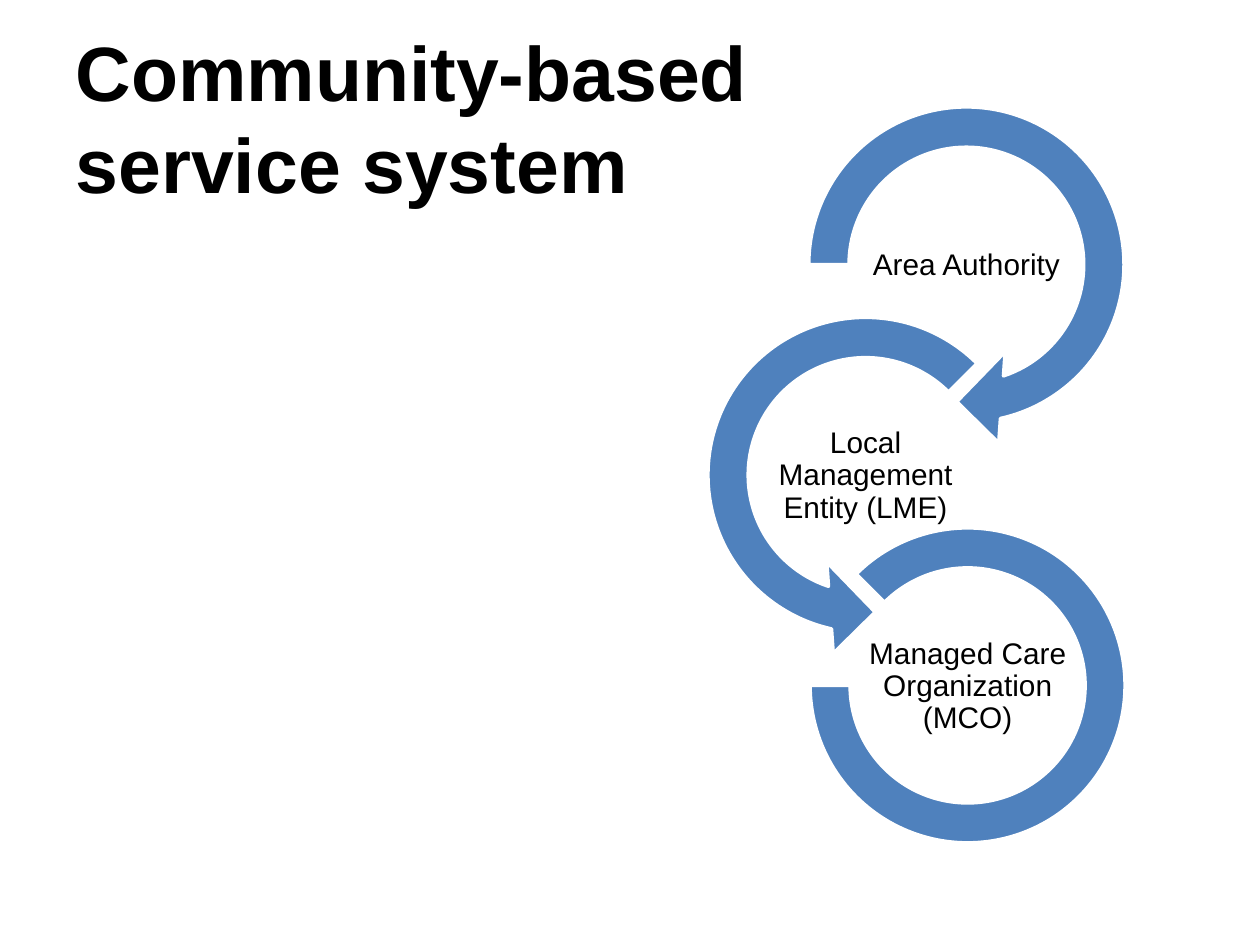
from pptx import Presentation
from pptx.dml.color import RGBColor
from pptx.enum.shapes import MSO_SHAPE as Shape
from pptx.enum.text import MSO_ANCHOR as Anchor, PP_ALIGN as Align
from pptx.util import Inches, Pt

BLACK = RGBColor(0x00, 0x00, 0x00)
WHITE = RGBColor(0xFF, 0xFF, 0xFF)
BLUE = RGBColor(0x4F, 0x81, 0xBD)

TITLE = "Community-based service system"
STAGES = [
    ("Area Authority", Shape.CIRCULAR_ARROW, 7.67, 2.91,
     (0.11, 11.42, 45, 108, 0.125)),
    ("Local Management Entity (LME)", Shape.LEFT_CIRCULAR_ARROW, 6.87, 2.91,
     (0.11, 11.42, 63, 189, 0.125)),
    ("Managed Care Organization (MCO)", Shape.BLOCK_ARC, 7.68, 2.5,
     (135, 108, 0.127)),
]
FIRST_CENTER, STEP = 2.1, 1.67
LABEL_WIDTH, LABEL_HEIGHT = 1.62, 0.81
LABEL_INSET = Inches(0.01)


def format_text(frame, text, size, align, bold=False):
    frame.text = text
    frame.word_wrap = True
    frame.vertical_anchor = Anchor.MIDDLE
    para = frame.paragraphs[0]
    para.alignment = align
    font = para.runs[0].font
    font.name, font.size, font.bold = "Arial", Pt(size), bold
    font.color.rgb = BLACK
    return para


def add_ring(page, kind, center_x, center_y, size, adjustments):
    ring = page.shapes.add_shape(
        kind, Inches(center_x - size / 2), Inches(center_y - size / 2),
        Inches(size), Inches(size))
    for index, value in enumerate(adjustments):
        ring.adjustments[index] = value
    ring.shadow.inherit = False
    ring.fill.solid()
    ring.fill.fore_color.rgb = BLUE
    ring.line.color.rgb = WHITE
    ring.line.width = Pt(2)


def add_label(page, text, center_x, center_y):
    box = page.shapes.add_textbox(
        Inches(center_x - LABEL_WIDTH / 2), Inches(center_y - LABEL_HEIGHT / 2),
        Inches(LABEL_WIDTH), Inches(LABEL_HEIGHT))
    frame = box.text_frame
    frame.margin_left = frame.margin_right = LABEL_INSET
    frame.margin_top = frame.margin_bottom = LABEL_INSET
    format_text(frame, text, 17, Align.CENTER).line_spacing = 0.9


def main():
    deck = Presentation()
    deck.slide_width, deck.slide_height = Inches(10), Inches(7.5)
    page = deck.slides.add_slide(deck.slide_layouts[5])

    title = page.shapes.title
    title.left, title.top = Inches(0.5), Inches(0.3)
    title.width, title.height = Inches(5.75), Inches(1.25)
    format_text(title.text_frame, TITLE, 44, Align.LEFT, bold=True)

    for row, (text, kind, center_x, size, adjustments) in enumerate(STAGES):
        center_y = FIRST_CENTER + row * STEP
        add_ring(page, kind, center_x, center_y, size, adjustments)
        add_label(page, text, center_x, center_y + 0.01)

    deck.save("out.pptx")


if __name__ == "__main__":
    main()
